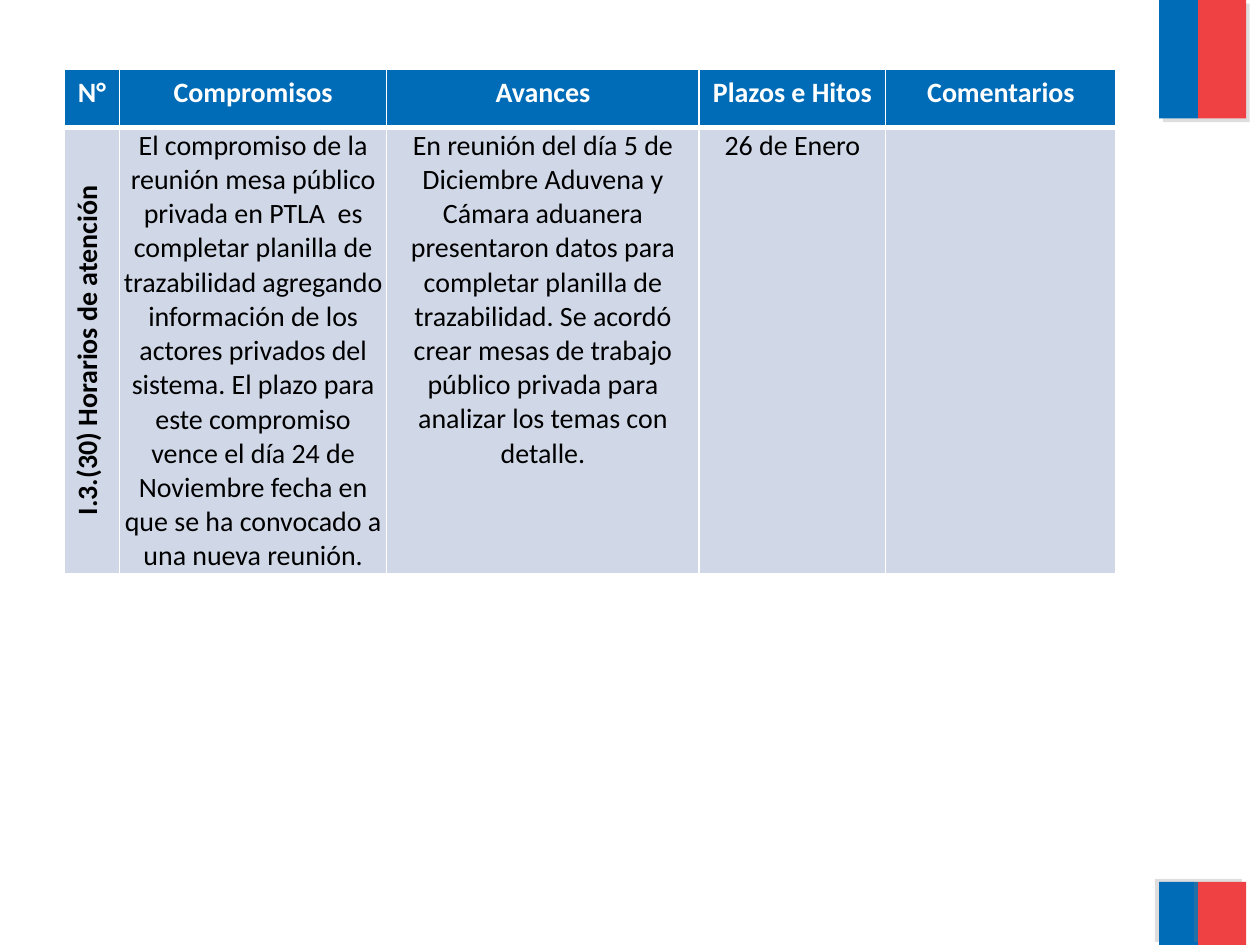
from lxml.etree import SubElement
from pptx import Presentation
from pptx.dml.color import RGBColor
from pptx.enum.shapes import MSO_SHAPE
from pptx.enum.text import MSO_ANCHOR, PP_ALIGN
from pptx.oxml.ns import qn
from pptx.util import Pt

PX = 9144
BLUE = RGBColor(0x00, 0x6C, 0xB7)
RED = RGBColor(0xEF, 0x41, 0x44)
PALE = RGBColor(0xD0, 0xD8, 0xE8)
GREY = RGBColor(0x80, 0x80, 0x80)
WHITE = RGBColor(0xFF, 0xFF, 0xFF)
BLACK = RGBColor(0x00, 0x00, 0x00)

COLUMNS = [
    ("N°", 44),
    ("Compromisos", 212),
    ("Avances", 248),
    ("Plazos e Hitos", 148),
    ("Comentarios", 183),
]
TOPIC = "I.3.(30) Horarios de atención"
COMMITMENT = (
    "El compromiso de la reunión mesa público privada en PTLA  es completar "
    "planilla de trazabilidad agregando información de los actores privados del "
    "sistema. El plazo para este compromiso vence el día 24 de Noviembre fecha "
    "en que se ha convocado a una nueva reunión."
)
PROGRESS = (
    "En reunión del día 5 de Diciembre Aduvena y Cámara aduanera presentaron "
    "datos para completar planilla de trazabilidad. Se acordó crear mesas de "
    "trabajo público privada para analizar los temas con detalle."
)
DEADLINE = "26 de Enero"


def px(length):
    return length * PX


def write_text(frame, text, color=BLACK, bold=False, size=16):
    paragraph = frame.paragraphs[0]
    paragraph.alignment = PP_ALIGN.CENTER
    run = paragraph.add_run()
    run.text = text
    run.font.name = "Calibri"
    run.font.size = Pt(size)
    run.font.bold = bold
    run.font.color.rgb = color


def add_solid(parent, color, alpha=100):
    color_node = SubElement(parent, qn("a:srgbClr"), val=str(color))
    if alpha < 100:
        SubElement(color_node, qn("a:alpha"), val=str(alpha * 1000))


def add_shadow(band, angle):
    effects = SubElement(band._element.spPr, qn("a:effectLst"))
    shadow = SubElement(
        effects, qn("a:outerShdw"), blurRad="0", dist=str(Pt(3)),
        dir=str(angle * 60000), algn="ctr", rotWithShape="0",
    )
    add_solid(shadow, GREY, alpha=25)


def add_flag(slide, left, top, height, shadow_angle):
    for offset, width, color in ((0, 31, BLUE), (31, 38, RED)):
        band = slide.shapes.add_shape(
            MSO_SHAPE.RECTANGLE, px(left + offset), px(top), px(width), px(height)
        )
        band.fill.solid()
        band.fill.fore_color.rgb = color
        band.line.fill.background()
        add_shadow(band, shadow_angle)


def style_cell(cell, fill, bottom_width=1, top_width=1):
    properties = cell._tc.get_or_add_tcPr()
    for side, width in (("L", 1), ("R", 1), ("T", top_width), ("B", bottom_width)):
        border = SubElement(properties, qn(f"a:ln{side}"), w=str(Pt(width)))
        add_solid(SubElement(border, qn("a:solidFill")), WHITE)
    cell.fill.solid()
    cell.fill.fore_color.rgb = fill


def add_commitments(slide, left, top, header_height, body_height):
    total_width = sum(width for _, width in COLUMNS)
    table = slide.shapes.add_table(
        2, len(COLUMNS), px(left), px(top), px(total_width),
        px(header_height + body_height),
    ).table
    table.rows[0].height = px(header_height)
    table.rows[1].height = px(body_height)

    for index, (heading, width) in enumerate(COLUMNS):
        table.columns[index].width = px(width)
        header, body = table.cell(0, index), table.cell(1, index)
        style_cell(header, BLUE, bottom_width=3)
        style_cell(body, PALE, top_width=3)
        write_text(header.text_frame, heading, color=WHITE, bold=True)

    topic = table.cell(1, 0)
    topic._tc.get_or_add_tcPr().set("vert", "vert270")
    write_text(topic.text_frame, TOPIC, bold=True)

    for index, detail in enumerate((COMMITMENT, PROGRESS, DEADLINE), start=1):
        cell = table.cell(1, index)
        cell.margin_left = cell.margin_right = cell.margin_top = px(1)
        cell.margin_bottom = 0
        write_text(cell.text_frame, detail)
    table.cell(1, 1).vertical_anchor = MSO_ANCHOR.MIDDLE


def main():
    presentation = Presentation()
    presentation.slide_width = px(1000)
    presentation.slide_height = px(750)
    slide = presentation.slides.add_slide(presentation.slide_layouts[6])
    add_flag(slide, left=920, top=0, height=94, shadow_angle=45)
    add_flag(slide, left=920, top=700, height=50, shadow_angle=215)
    add_commitments(slide, left=51, top=55, header_height=46, body_height=330)
    presentation.save("out.pptx")


if __name__ == "__main__":
    main()
